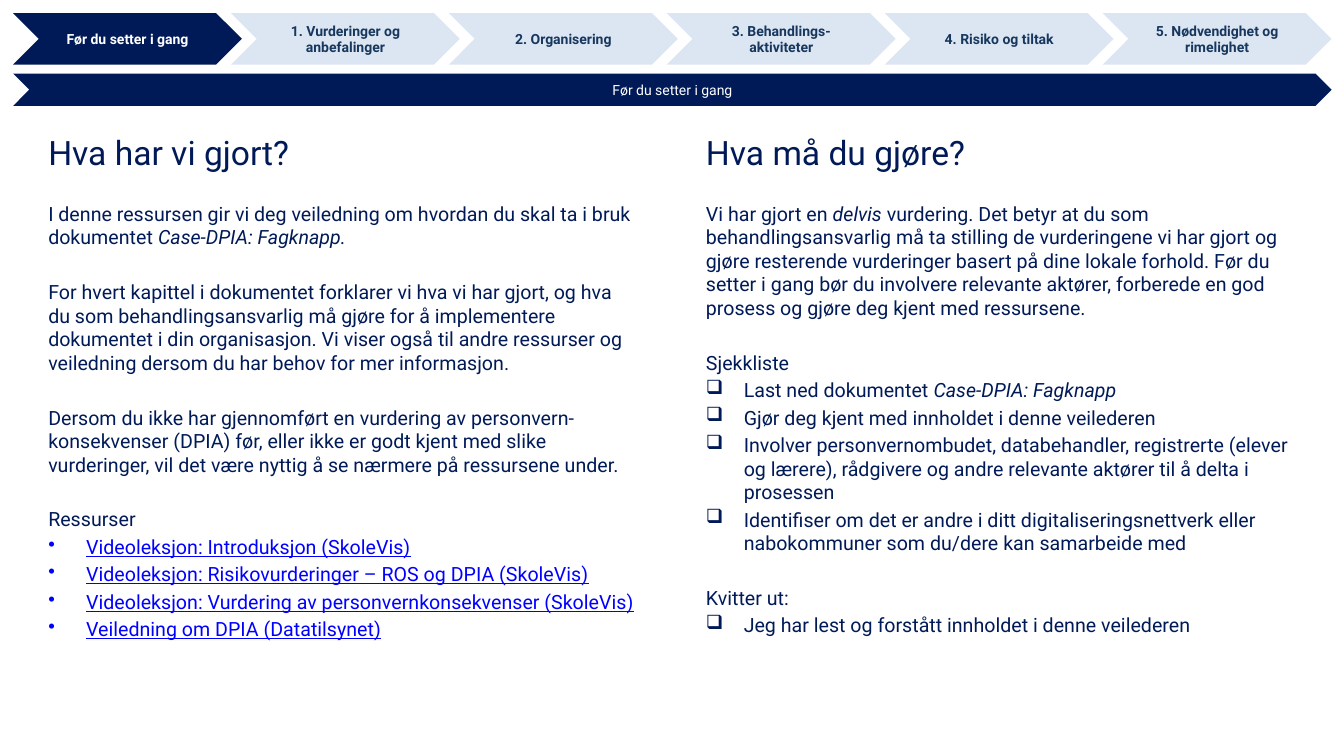
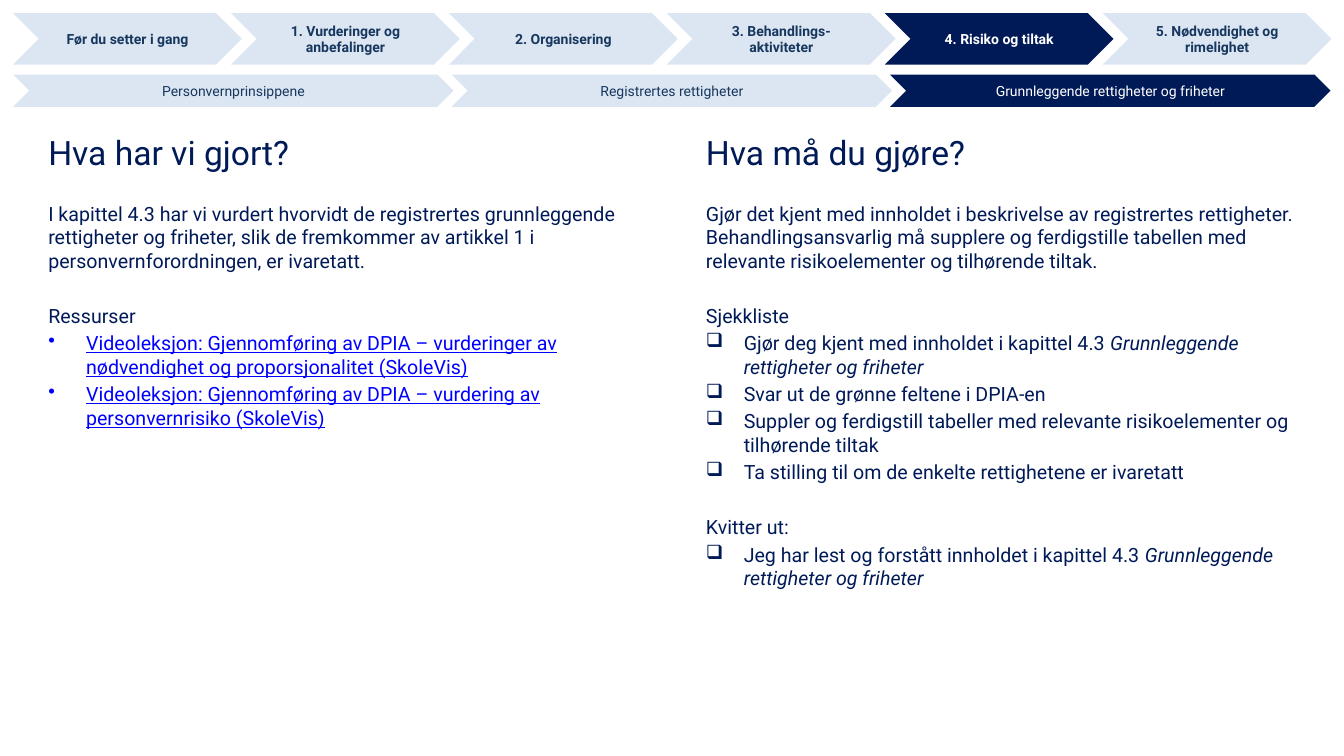
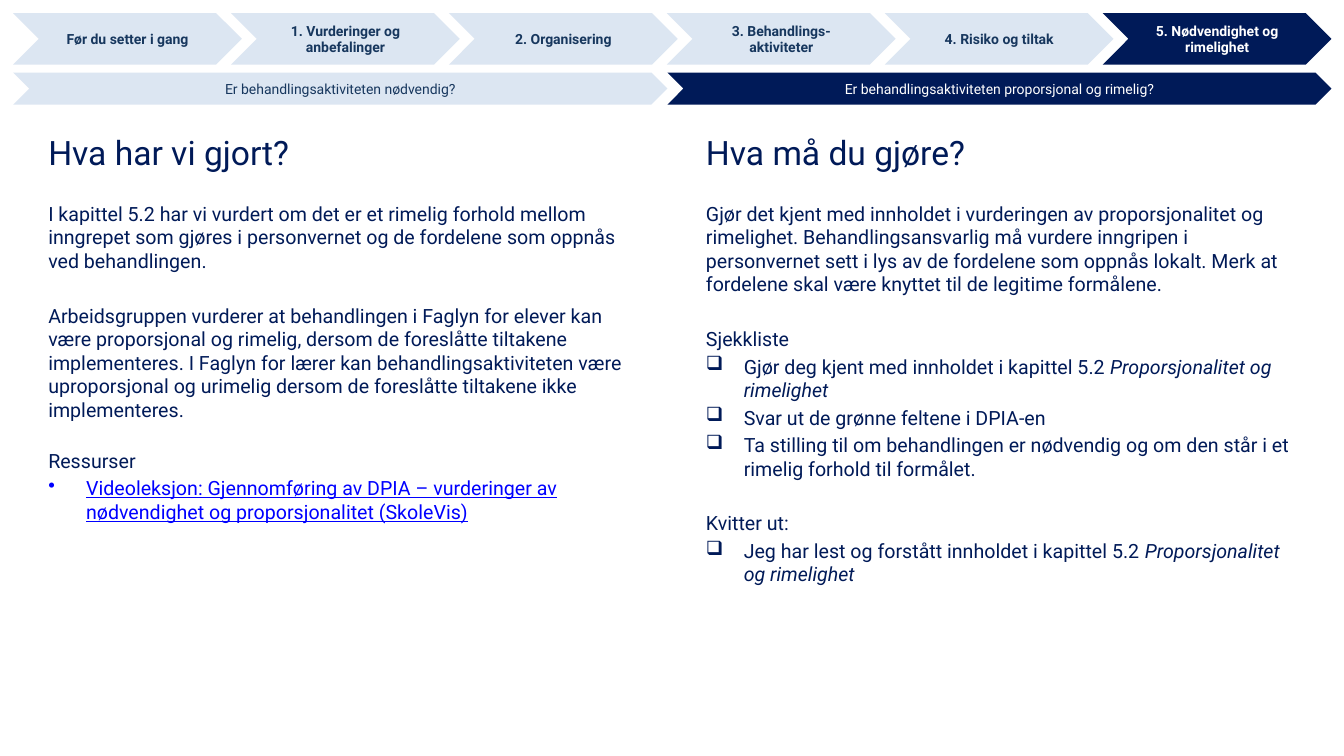
import pptx
import pptx.util
import pptx.dml.color
import pptx.enum.shapes
import pptx.enum.text
import pptx.oxml.ns
import lxml.etree

Pt = pptx.util.Pt
FONT = "Roboto"
COLORS = {"navy": "001A58", "pale": "DCE6F2", "steel": "17375E",
          "white": "FFFFFF", "link": "0000FF"}

EDGE, RIGHT = 9.4, 951.1
STEP_W = 163.4
COLS = (27.4, 497.2)
COL_W = 435
INDENT = 27

# kind: (space before, bullet, color)
KINDS = {
    "text": (22.4, None, "navy"),
    "head": (22.4, None, "navy"),
    "near": (19.6, None, "navy"),
    "link": (2.8, "•", "link"),
    "check": (2.8, "❑", "navy"),
}

STEPS = ["Før du setter i gang", "1. Vurderinger og anbefalinger",
         "2. Organisering", "3. Behandlings-aktiviteter",
         "4. Risiko og tiltak", "5. Nødvendighet og rimelighet"]
TITLES = ("Hva har vi gjort?", "Hva må du gjøre?")
LESSON = ("Videoleksjon: Gjennomføring av DPIA – vurderinger av "
          "nødvendighet og proporsjonalitet (SkoleVis)")
ANSWER = "Svar ut de grønne feltene i DPIA-en"

# Asterisks enclose italic words.
SLIDES = [
    {
        "step": 0, "top": 52.6, "lap": 0,
        "parts": [("Før du setter i gang", 941.7)],
        "done": [
            ("text", "I denne ressursen gir vi deg veiledning om hvordan du "
             "skal ta i bruk dokumentet *Case-DPIA: Fagknapp.*"),
            ("text", "For hvert kapittel i dokumentet forklarer vi hva vi har "
             "gjort, og hva du som behandlingsansvarlig må gjøre for å "
             "implementere dokumentet i din organisasjon. Vi viser også til "
             "andre ressurser og veiledning dersom du har behov for mer "
             "informasjon."),
            ("text", "Dersom du ikke har gjennomført en vurdering av "
             "personvern-konsekvenser (DPIA) før, eller ikke er godt kjent "
             "med slike vurderinger, vil det være nyttig å se nærmere på "
             "ressursene under."),
            ("head", "Ressurser"),
            ("link", "Videoleksjon: Introduksjon (SkoleVis)"),
            ("link", "Videoleksjon: Risikovurderinger – ROS og DPIA "
             "(SkoleVis)"),
            ("link", "Videoleksjon: Vurdering av personvernkonsekvenser "
             "(SkoleVis)"),
            ("link", "Veiledning om DPIA (Datatilsynet)"),
        ],
        "todo": [
            ("text", "Vi har gjort en *delvis* vurdering. Det betyr at du som "
             "behandlingsansvarlig må ta stilling de vurderingene vi har "
             "gjort og gjøre resterende vurderinger basert på dine lokale "
             "forhold. Før du setter i gang bør du involvere relevante "
             "aktører, forberede en god prosess og gjøre deg kjent med "
             "ressursene."),
            ("head", "Sjekkliste"),
            ("check", "Last ned dokumentet *Case-DPIA: Fagknapp*"),
            ("check", "Gjør deg kjent med innholdet i denne veilederen"),
            ("check", "Involver personvernombudet, databehandler, "
             "registrerte (elever og lærere), rådgivere og andre relevante "
             "aktører til å delta i prosessen"),
            ("check", "Identifiser om det er andre i ditt "
             "digitaliseringsnettverk eller nabokommuner som du/dere kan "
             "samarbeide med"),
            ("head", "Kvitter ut:"),
            ("check", "Jeg har lest og forstått innholdet i denne "
             "veilederen"),
        ],
    },
    {
        "step": 4, "top": 53.3, "lap": 1.4,
        "parts": [("Personvernprinsippene", 314.6),
                  ("Registrertes rettigheter", 314.6),
                  ("Grunnleggende rettigheter og friheter", 314.6)],
        "done": [
            ("text", "I kapittel 4.3 har vi vurdert hvorvidt de registrertes "
             "grunnleggende rettigheter og friheter, slik de fremkommer av "
             "artikkel 1 i personvernforordningen, er ivaretatt."),
            ("head", "Ressurser"),
            ("link", LESSON),
            ("link", "Videoleksjon: Gjennomføring av DPIA – vurdering av "
             "personvernrisiko (SkoleVis)"),
        ],
        "todo": [
            ("text", "Gjør det kjent med innholdet i beskrivelse av "
             "registrertes rettigheter. Behandlingsansvarlig må supplere og "
             "ferdigstille tabellen med relevante risikoelementer og "
             "tilhørende tiltak."),
            ("head", "Sjekkliste"),
            ("check", "Gjør deg kjent med innholdet i kapittel 4.3 "
             "*Grunnleggende rettigheter og friheter*"),
            ("check", ANSWER),
            ("check", "Suppler og ferdigstill tabeller med relevante "
             "risikoelementer og tilhørende tiltak"),
            ("check", "Ta stilling til om de enkelte rettighetene er "
             "ivaretatt"),
            ("head", "Kvitter ut:"),
            ("check", "Jeg har lest og forstått innholdet i kapittel 4.3 "
             "*Grunnleggende rettigheter og friheter*"),
        ],
    },
    {
        "step": 5, "top": 51.8, "lap": 0,
        "parts": [("Er behandlingsaktiviteten nødvendig?", 467.3),
                  ("Er behandlingsaktiviteten proporsjonal og rimelig?",
                   474.4)],
        "done": [
            ("text", "I kapittel 5.2 har vi vurdert om det er et rimelig "
             "forhold mellom inngrepet som gjøres i personvernet og de "
             "fordelene som oppnås ved behandlingen."),
            ("text", "Arbeidsgruppen vurderer at behandlingen i Faglyn for "
             "elever kan være proporsjonal og rimelig, dersom de foreslåtte "
             "tiltakene implementeres. I Faglyn for lærer kan "
             "behandlingsaktiviteten være uproporsjonal og urimelig dersom "
             "de foreslåtte tiltakene ikke implementeres."),
            ("near", "Ressurser"),
            ("link", LESSON),
        ],
        "todo": [
            ("text", "Gjør det kjent med innholdet i vurderingen av "
             "proporsjonalitet og rimelighet. Behandlingsansvarlig må "
             "vurdere inngripen i personvernet sett i lys av de fordelene "
             "som oppnås lokalt. Merk at fordelene skal være knyttet til de "
             "legitime formålene."),
            ("head", "Sjekkliste"),
            ("check", "Gjør deg kjent med innholdet i kapittel 5.2 "
             "*Proporsjonalitet og rimelighet*"),
            ("check", ANSWER),
            ("check", "Ta stilling til om behandlingen er nødvendig og om "
             "den står i et rimelig forhold til formålet."),
            ("head", "Kvitter ut:"),
            ("check", "Jeg har lest og forstått innholdet i kapittel 5.2 "
             "*Proporsjonalitet og rimelighet*"),
        ],
    },
]


def rgb(name):
    return pptx.dml.color.RGBColor.from_string(COLORS[name])


def style(font, size, color, bold=False):
    font.name = FONT
    font.size = Pt(size)
    font.bold = bold
    font.color.rgb = rgb(color)


def chevron(slide, left, top, width, height, text, active, bold=False):
    shape = slide.shapes.add_shape(
        pptx.enum.shapes.MSO_SHAPE.CHEVRON,
        Pt(left), Pt(top), Pt(width), Pt(height))
    shape.shadow.inherit = False
    shape.fill.solid()
    shape.fill.fore_color.rgb = rgb("navy" if active else "pale")
    shape.line.fill.background()
    frame = shape.text_frame
    frame.text = text
    frame.vertical_anchor = pptx.enum.text.MSO_ANCHOR.MIDDLE
    para = frame.paragraphs[0]
    para.alignment = pptx.enum.text.PP_ALIGN.CENTER
    style(para.runs[0].font, 10, "white" if active else "steel", bold)


def steps(slide, active):
    pitch = (RIGHT - EDGE - STEP_W) / (len(STEPS) - 1)
    for i, text in enumerate(STEPS):
        chevron(slide, EDGE + i * pitch, 9.4, STEP_W, 36.7, text,
                i == active, bold=True)


def subbar(slide, top, parts, lap):
    """Row of chapter parts, the last one active."""
    left = EDGE
    for i, (text, width) in enumerate(parts):
        chevron(slide, left, top, width, 23, text, i == len(parts) - 1)
        left += width - lap


def textbox(slide, left, top, height):
    box = slide.shapes.add_textbox(Pt(left), Pt(top), Pt(COL_W), Pt(height))
    box.text_frame.word_wrap = True
    return box.text_frame


def title(slide, left, text):
    frame = textbox(slide, left, 87.1, 43.2)
    frame.vertical_anchor = pptx.enum.text.MSO_ANCHOR.MIDDLE
    frame.text = text
    style(frame.paragraphs[0].runs[0].font, 24, "navy")


def bullet(para, char):
    props = para._p.get_or_add_pPr()
    props.set("marL", str(Pt(INDENT)))
    props.set("indent", str(-Pt(INDENT)))
    mark = lxml.etree.SubElement(props, pptx.oxml.ns.qn("a:buChar"))
    mark.set("char", char)


def body(slide, left, items):
    frame = textbox(slide, left, 140.4, 324.7)
    for i, (kind, text) in enumerate(items):
        gap, char, color = KINDS[kind]
        para = frame.add_paragraph() if i else frame.paragraphs[0]
        if char:
            bullet(para, char)
        if i:
            para.space_before = Pt(gap)
        for j, piece in enumerate(text.split("*")):
            if piece:
                run = para.add_run()
                run.text = piece
                style(run.font, 14, color)
                run.font.italic = j % 2 == 1
                run.font.underline = kind == "link"


def main():
    deck = pptx.Presentation()
    deck.slide_width, deck.slide_height = Pt(960), Pt(540)
    for page in SLIDES:
        slide = deck.slides.add_slide(deck.slide_layouts[6])
        steps(slide, page["step"])
        subbar(slide, page["top"], page["parts"], page["lap"])
        for left, head, key in zip(COLS, TITLES, ("done", "todo")):
            title(slide, left, head)
            body(slide, left, page[key])
    deck.save("out.pptx")


if __name__ == "__main__":
    main()
